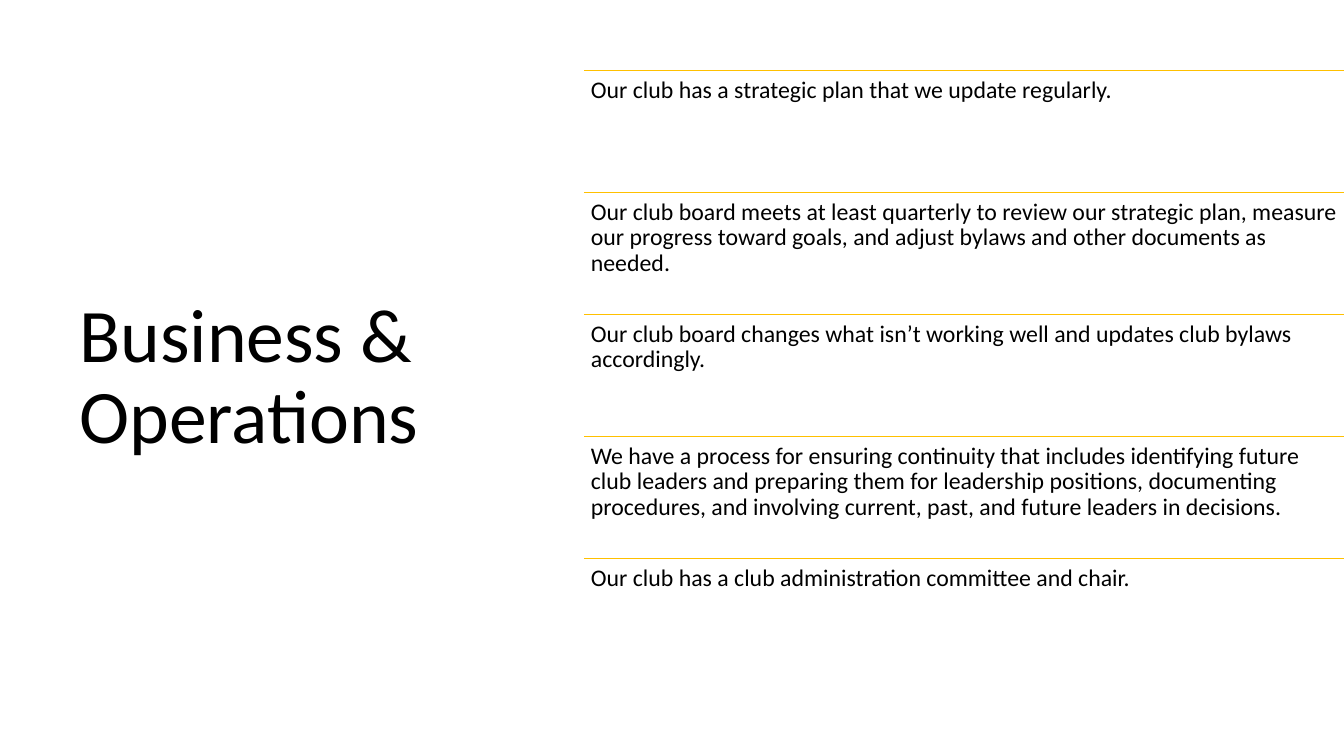
import dataclasses

import lxml.etree
import pptx
import pptx.dml.color
import pptx.enum.shapes
import pptx.enum.text
import pptx.oxml.ns
import pptx.slide
import pptx.util

Inches = pptx.util.Inches
Anchor = pptx.enum.text.MSO_ANCHOR

PAGE_WIDTH, PAGE_HEIGHT = 13.33, 7.5
LIST_LEFT, LIST_TOP = 5.79, 0.7
LIST_WIDTH, ROW_HEIGHT = 7.55, 1.21
BLACK, GOLD = "000000", "FFC000"

STATEMENTS = [
    "Our club has a strategic plan that we update regularly.",
    "Our club board meets at least quarterly to review our strategic plan, "
    "measure our progress toward goals, and adjust bylaws and other documents as needed.",
    "Our club board changes what isn’t working well and updates club bylaws accordingly.",
    "We have a process for ensuring continuity that includes identifying future "
    "club leaders and preparing them for leadership positions, documenting procedures, "
    "and involving current, past, and future leaders in decisions.",
    "Our club has a club administration committee and chair.",
]


@dataclasses.dataclass(frozen=True)
class TextBlock:
    text: str
    left: float
    top: float
    width: float
    height: float
    size: float
    side_inset: float
    end_inset: float
    anchor: Anchor


def color(value: str) -> pptx.dml.color.RGBColor:
    return pptx.dml.color.RGBColor.from_string(value)


def draw_text(page: pptx.slide.Slide, block: TextBlock) -> None:
    box = page.shapes.add_textbox(
        Inches(block.left), Inches(block.top), Inches(block.width), Inches(block.height)
    )
    frame_format = {
        "word_wrap": True,
        "vertical_anchor": block.anchor,
        "margin_left": Inches(block.side_inset),
        "margin_right": Inches(block.side_inset),
        "margin_top": Inches(block.end_inset),
        "margin_bottom": Inches(block.end_inset),
    }
    for name, value in frame_format.items():
        setattr(box.text_frame, name, value)
    para = box.text_frame.paragraphs[0]
    para.line_spacing = 0.9
    span = para.add_run()
    span.text = block.text
    for name, value in {"name": "Calibri", "size": pptx.util.Pt(block.size)}.items():
        setattr(span.font, name, value)
    span.font.color.rgb = color(BLACK)


def draw_divider(page: pptx.slide.Slide, top: float) -> None:
    divider = page.shapes.add_connector(
        pptx.enum.shapes.MSO_CONNECTOR.STRAIGHT,
        Inches(LIST_LEFT), Inches(top), Inches(PAGE_WIDTH), Inches(top),
    )
    divider.line.color.rgb = color(GOLD)
    divider.line.width = pptx.util.Pt(1)
    properties = divider._element.spPr
    lxml.etree.SubElement(properties, pptx.oxml.ns.qn("a:effectLst"))


def main() -> None:
    deck = pptx.Presentation()
    deck.slide_width = Inches(PAGE_WIDTH)
    deck.slide_height = Inches(PAGE_HEIGHT)
    page = deck.slides.add_slide(deck.slide_layouts[6])

    draw_text(page, TextBlock("Business & Operations", 0.69, 0.7, 3.74, 6.11,
                              54, 0.1, 0.05, Anchor.MIDDLE))
    for row, statement in enumerate(STATEMENTS):
        top = LIST_TOP + row * ROW_HEIGHT
        draw_divider(page, top)
        draw_text(page, TextBlock(statement, LIST_LEFT, top, LIST_WIDTH, ROW_HEIGHT,
                                  17, 0.07, 0.07, Anchor.TOP))

    deck.save("out.pptx")


if __name__ == "__main__":
    main()
